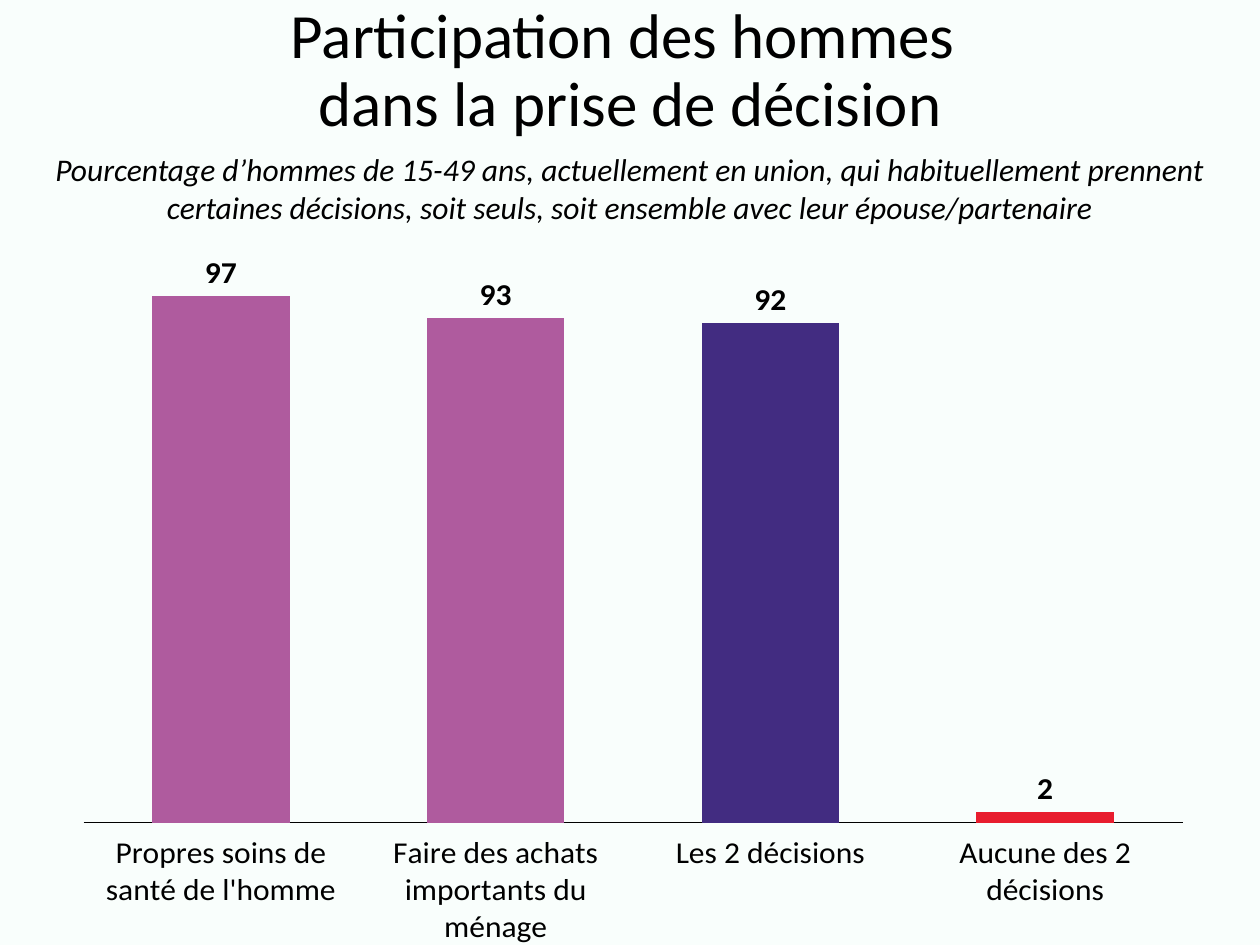
from dataclasses import dataclass

from lxml.etree import SubElement
from pptx import Presentation
from pptx.chart.data import CategoryChartData
from pptx.dml.color import RGBColor
from pptx.enum.chart import XL_CHART_TYPE as ChartType
from pptx.enum.chart import XL_LABEL_POSITION as LabelPos
from pptx.enum.chart import XL_TICK_LABEL_POSITION as TickLabels
from pptx.enum.chart import XL_TICK_MARK as Tick
from pptx.enum.text import MSO_ANCHOR as Anchor
from pptx.enum.text import PP_ALIGN as Align
from pptx.oxml.ns import qn
from pptx.util import Inches, Pt


@dataclass(frozen=True)
class Theme:
    font: str = "Calibri"
    title_size: int = 36
    body_size: int = 18
    chart_size: int = 10
    ink: str = "000000"
    background: str = "F9FEFC"
    single: str = "AF5B9E"
    both: str = "422C81"
    neither: str = "E81D2E"


@dataclass(frozen=True)
class Box:
    left: float
    top: float
    width: float
    height: float

    def emu(self) -> tuple:
        return tuple(Inches(v) for v in (self.left, self.top, self.width, self.height))


@dataclass(frozen=True)
class Bar:
    label: str
    value: int
    color: str


THEME = Theme()
WIDTH, HEIGHT = 10, 7.5
TITLE_H, SUBTITLE_H = 1.14, 0.71
CHART_TOP = TITLE_H + SUBTITLE_H
TITLE_BOX = Box(0, 0, WIDTH, TITLE_H)
SUBTITLE_BOX = Box(0, TITLE_H, WIDTH, SUBTITLE_H)
CHART_BOX = Box(0.51, CHART_TOP, 9.03, HEIGHT - CHART_TOP)
PLOT_SHARES = {"x": 0.017, "y": 0.068, "w": 0.966, "h": 0.792}

TITLE = "Participation des hommes \vdans la prise de décision"
SUBTITLE = (
    "Pourcentage d’hommes de 15-49 ans, actuellement en union, qui habituellement "
    "prennent certaines décisions, soit seuls, soit ensemble avec leur épouse/partenaire"
)
BARS = (
    Bar("Propres soins de santé de l'homme", 97, THEME.single),
    Bar("Faire des achats importants du ménage", 93, THEME.single),
    Bar("Les 2 décisions", 92, THEME.both),
    Bar("Aucune des 2 décisions", 2, THEME.neither),
)


def rgb(color: str) -> RGBColor:
    return RGBColor.from_string(color)


def style_font(font, size: int, bold: bool = False, italic: bool = False) -> None:
    font.name, font.size = THEME.font, Pt(size)
    font.bold, font.italic = bold, italic
    font.color.rgb = rgb(THEME.ink)


def add_text(slide, box: Box, text: str, size: int, anchor=Anchor.TOP,
             spacing: float = 1.0, italic: bool = False) -> None:
    tf = slide.shapes.add_textbox(*box.emu()).text_frame
    tf.word_wrap, tf.vertical_anchor = True, anchor
    p = tf.paragraphs[0]
    p.text, p.alignment, p.line_spacing = text, Align.CENTER, spacing
    style_font(p.font, size, italic=italic)


def set_plot_layout(chart, shares: dict) -> None:
    area = chart.plots[0]._element.getparent()
    for old in area.findall(qn("c:layout")):
        area.remove(old)
    layout = SubElement(area, qn("c:layout"))
    area.insert(0, layout)
    manual = SubElement(layout, qn("c:manualLayout"))
    settings = {"layoutTarget": "inner", "xMode": "edge", "yMode": "edge", **shares}
    for name, value in settings.items():
        SubElement(manual, qn(f"c:{name}")).set("val", str(value))


def add_bar_chart(slide, box: Box, bars: tuple[Bar, ...]) -> None:
    data = CategoryChartData()
    data.categories = [bar.label for bar in bars]
    data.add_series("Series 1", [bar.value for bar in bars])
    chart = slide.shapes.add_chart(ChartType.COLUMN_CLUSTERED, *box.emu(), data).chart
    chart.has_legend = chart.has_title = False
    style_font(chart.font, THEME.chart_size)
    set_plot_layout(chart, PLOT_SHARES)

    cat, val = chart.category_axis, chart.value_axis
    cat.major_tick_mark = cat.minor_tick_mark = Tick.NONE
    cat.tick_label_position = TickLabels.LOW
    style_font(cat.tick_labels.font, THEME.body_size)
    cat.format.line.color.rgb = rgb(THEME.ink)
    cat.format.line.width = Pt(0.75)
    val.visible = val.has_major_gridlines = False
    val.minimum_scale, val.maximum_scale = 0, 100

    plot = chart.plots[0]
    plot.gap_width, plot.vary_by_categories = 100, False
    series = plot.series[0]
    series.format.fill.solid()
    series.format.fill.fore_color.rgb = rgb(THEME.single)
    for i, bar in enumerate(bars):
        if bar.color != THEME.single:
            fill = series.points[i].format.fill
            fill.solid()
            fill.fore_color.rgb = rgb(bar.color)
    labels = series.data_labels
    labels.show_value, labels.position = True, LabelPos.OUTSIDE_END
    style_font(labels.font, THEME.body_size, bold=True)


def main() -> None:
    prs = Presentation()
    prs.slide_width, prs.slide_height = Inches(WIDTH), Inches(HEIGHT)
    slide = prs.slides.add_slide(prs.slide_layouts[6])
    fill = slide.background.fill
    fill.solid()
    fill.fore_color.rgb = rgb(THEME.background)
    add_text(slide, TITLE_BOX, TITLE, THEME.title_size, Anchor.MIDDLE, spacing=0.9)
    add_bar_chart(slide, CHART_BOX, BARS)
    add_text(slide, SUBTITLE_BOX, SUBTITLE, THEME.body_size, italic=True)
    prs.save("out.pptx")


if __name__ == "__main__":
    main()
